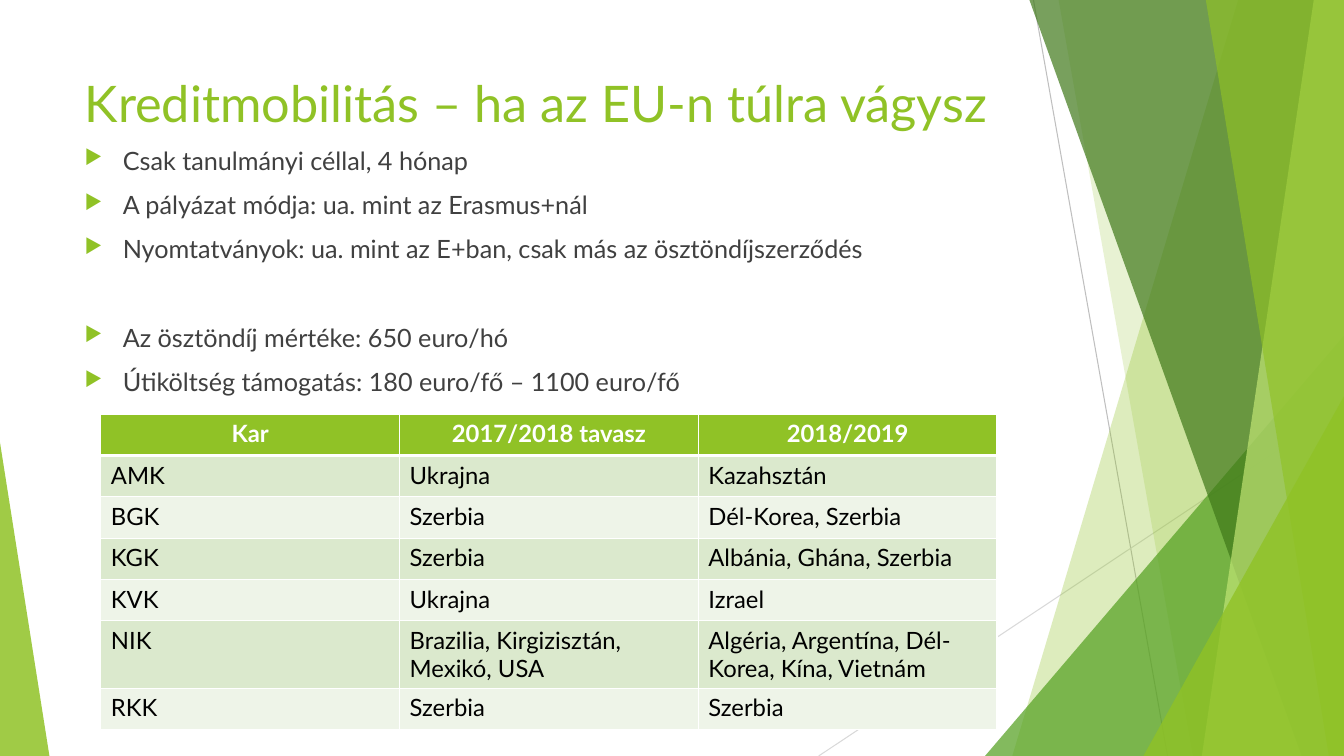
from lxml.etree import SubElement
from pptx import Presentation
from pptx.dml.color import RGBColor
from pptx.enum.shapes import MSO_CONNECTOR, MSO_SHAPE
from pptx.enum.text import MSO_ANCHOR, MSO_AUTO_SIZE, PP_ALIGN
from pptx.oxml import parse_xml
from pptx.oxml.ns import nsdecls, qn
from pptx.util import Inches, Pt

WIDTH, HEIGHT = 13.33, 7.5
GREEN, WHITE = "90C226", "FFFFFF"
BANDS = ["DBE9CD", "EEF4E8"]
TITLE_FORMAT = {"size": Pt(36), "color": GREEN}
BODY_FORMAT = {"size": Pt(18), "color": "404040"}
HEADER_FORMAT = {"size": Pt(17), "color": WHITE, "bold": True}
CELL_FORMAT = {"size": Pt(17), "color": "000000", "bold": False}

GUIDE_LINES = [
    ((10.25, 0), (11.58, HEIGHT), "BFBFBF"),
    ((WIDTH, 4.03), (8.12, HEIGHT), "D9D9D9"),
]
# Top left x, bottom left x, colour, opacity; each reaches the right edge
BACK_PANELS = [(12.28, 10.04, GREEN, 30), (10.5, 11.83, GREEN, 20)]
FRONT_PANELS = [
    (10.21, 12.91, "3F7819", 70),
    (13.03, 11.92, "C0E474", 70),
    (11.96, 13.18, GREEN, 65),
]
# Text and space before in points
BULLETS = [
    ("Csak tanulmányi céllal, 4 hónap", 0),
    ("A pályázat módja: ua. mint az Erasmus+nál", 10),
    ("Nyomtatványok: ua. mint az E+ban, csak más az ösztöndíjszerződés", 10),
    ("Az ösztöndíj mértéke: 650 euro/hó", 41.6),
    ("Útiköltség támogatás: 180 euro/fő – 1100 euro/fő", 10),
]
DESTINATIONS = [
    ("Kar", "2017/2018 tavasz", "2018/2019"),
    ("AMK", "Ukrajna", "Kazahsztán"),
    ("BGK", "Szerbia", "Dél-Korea, Szerbia"),
    ("KGK", "Szerbia", "Albánia, Ghána, Szerbia"),
    ("KVK", "Ukrajna", "Izrael"),
    ("NIK", "Brazilia, Kirgizisztán, Mexikó, USA",
     "Algéria, Argentína, Dél-Korea, Kína, Vietnám"),
    ("RKK", "Szerbia", "Szerbia"),
]


def rgb(value):
    return RGBColor.from_string(value)


class SlideBuilder:
    font_name = "Lato"

    def __init__(self, slide):
        self.slide = slide
        self.shapes = slide.shapes

    def add_text(self, paragraph, text, formats):
        run = paragraph.add_run()
        run.text = text
        run.font.name = self.font_name
        for name, value in formats.items():
            if name == "color":
                run.font.color.rgb = rgb(value)
            else:
                setattr(run.font, name, value)

    def paint(self, shape, color, opacity):
        """Give a shape a see-through fill without outline or shadow."""
        shape.shadow.inherit = False
        shape.fill.solid()
        shape.fill.fore_color.rgb = rgb(color)
        fill_element = shape._element.spPr.find(qn("a:solidFill"))
        SubElement(fill_element[0], qn("a:alpha"), val=str(opacity * 1000))
        shape.line.fill.background()

    def line(self, start, end, color):
        connector = self.shapes.add_connector(
            MSO_CONNECTOR.STRAIGHT, *map(Inches, start + end))
        connector.line.color.rgb = rgb(color)
        connector.line.width = Pt(0.75)
        SubElement(connector._element.spPr, qn("a:effectLst"))

    def panel(self, top_x, bottom_x, color, opacity):
        """Draw a slanted panel that fills the slide up to its right edge."""
        corners = [(WIDTH, 0), (WIDTH, HEIGHT), (bottom_x, HEIGHT)]
        builder = self.shapes.build_freeform(Inches(top_x), 0)
        builder.add_line_segments(
            [(Inches(x), Inches(y)) for x, y in corners], close=True)
        self.paint(builder.convert_to_shape(), color, opacity)

    def triangle(self, left, top, width, apex, color, opacity):
        """Draw a triangle that stands on the bottom edge of the slide."""
        box = map(Inches, (left, top, width, HEIGHT - top))
        shape = self.shapes.add_shape(MSO_SHAPE.ISOSCELES_TRIANGLE, *box)
        shape.adjustments[0] = apex
        self.paint(shape, color, opacity)

    def title(self, text, left, top, width, height):
        title = self.shapes.title
        title.left, title.top = Inches(left), Inches(top)
        title.width, title.height = Inches(width), Inches(height)
        frame = title.text_frame
        frame.word_wrap = True
        frame.auto_size = MSO_AUTO_SIZE.NONE
        frame.vertical_anchor = MSO_ANCHOR.TOP
        frame.paragraphs[0].alignment = PP_ALIGN.LEFT
        self.add_text(frame.paragraphs[0], text, TITLE_FORMAT)

    def bullets(self, items, left, top, width, height):
        box = self.shapes.add_textbox(*map(Inches, (left, top, width, height)))
        frame = box.text_frame
        frame.word_wrap = True
        for index, (text, space_before) in enumerate(items):
            paragraph = frame.add_paragraph() if index else frame.paragraphs[0]
            paragraph.space_before = Pt(space_before)
            properties = paragraph._p.get_or_add_pPr()
            properties.set("marL", str(Inches(0.38)))
            properties.set("indent", str(Inches(-0.38)))
            bullet_color = SubElement(properties, qn("a:buClr"))
            SubElement(bullet_color, qn("a:srgbClr"), val=GREEN)
            SubElement(properties, qn("a:buSzPct"), val="80000")
            SubElement(properties, qn("a:buChar"), char="▶")
            self.add_text(paragraph, text, BODY_FORMAT)

    def borders(self, cell, bottom_width):
        properties = cell._tc.get_or_add_tcPr()
        widths = {"lnL": 1, "lnR": 1, "lnT": 1, "lnB": bottom_width}
        for index, (side, width) in enumerate(widths.items()):
            properties.insert(index, parse_xml(
                f'<a:{side} {nsdecls("a")} w="{Pt(width)}"><a:solidFill>'
                f'<a:srgbClr val="{WHITE}"/></a:solidFill></a:{side}>'))

    def table(self, rows, left, top, width, row_height):
        size = (left, top, width, row_height * len(rows))
        frame = self.shapes.add_table(
            len(rows), len(rows[0]), *map(Inches, size))
        for row_index, row in enumerate(rows):
            header = row_index == 0
            for column_index, text in enumerate(row):
                cell = frame.table.cell(row_index, column_index)
                cell.fill.solid()
                cell.fill.fore_color.rgb = rgb(
                    GREEN if header else BANDS[(row_index - 1) % 2])
                self.borders(cell, 3 if header else 1)
                paragraph = cell.text_frame.paragraphs[0]
                paragraph.alignment = (
                    PP_ALIGN.CENTER if header else PP_ALIGN.LEFT)
                self.add_text(
                    paragraph, text, HEADER_FORMAT if header else CELL_FORMAT)


def main():
    presentation = Presentation()
    presentation.slide_width = Inches(WIDTH)
    presentation.slide_height = Inches(HEIGHT)
    layout = presentation.slide_layouts.get_by_name("Title Only")
    builder = SlideBuilder(presentation.slides.add_slide(layout))

    for guide_line in GUIDE_LINES:
        builder.line(*guide_line)
    for panel in BACK_PANELS:
        builder.panel(*panel)
    builder.triangle(9.77, 3.33, 3.56, 1, "54A021", 72)
    for panel in FRONT_PANELS:
        builder.panel(*panel)
    builder.triangle(11.34, 3.93, 1.99, 1, GREEN, 80)
    builder.triangle(0, 4.39, 0.49, 0, GREEN, 85)

    builder.title(
        "Kreditmobilitás – ha az EU-n túlra vágysz", 0.74, 0.67, 9.4, 1.44)
    builder.bullets(BULLETS, 0.74, 1.39, 9.4, 2.72)
    builder.table(DESTINATIONS, 1, 4.11, 8.89, 0.41)
    presentation.save("out.pptx")


if __name__ == "__main__":
    main()
